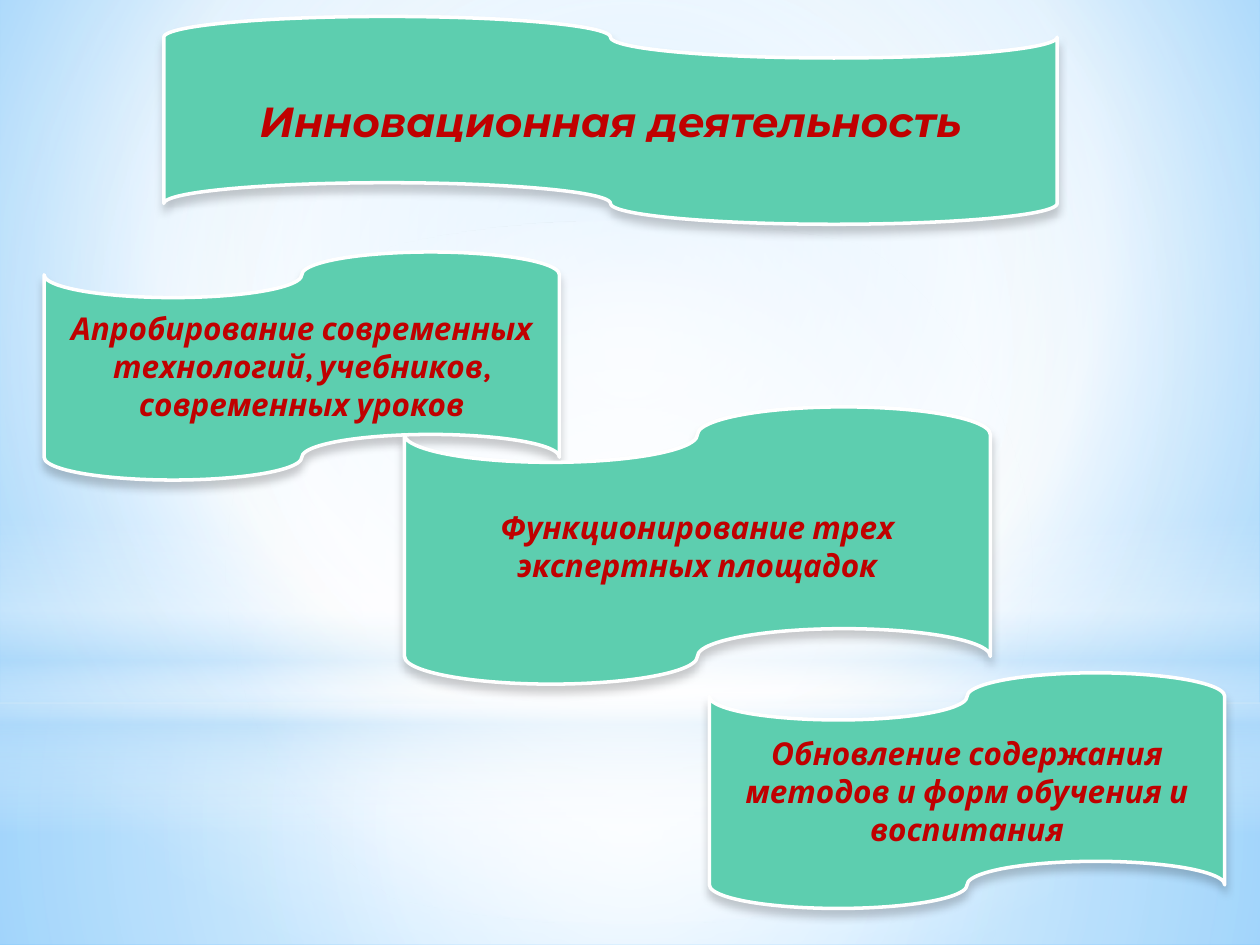
from lxml import etree
from pptx import Presentation
from pptx.dml.color import RGBColor
from pptx.enum.shapes import MSO_SHAPE as SHAPE
from pptx.enum.text import MSO_ANCHOR as ANCHOR, PP_ALIGN as ALIGN
from pptx.oxml import parse_xml
from pptx.oxml.ns import nsdecls, qn
from pptx.util import Inches, Pt

GREEN, RED, WHITE, SKY = "5DCEAF", "C00000", "FFFFFF", "B4DCFA"
CENTRE = (50, 50, 50, 50)


def rgb(value):
    return RGBColor.from_string(value)


def set_gradient(parent, stops, focus=None):
    """Swap the empty fill for a gradient: circular with a focus, else vertical."""
    grad = parse_xml(f'<a:gradFill {nsdecls("a")} rotWithShape="1"><a:gsLst/></a:gradFill>')
    for pos, color, opacity in stops:
        gs = etree.SubElement(grad[0], qn("a:gs"), pos=str(pos * 1000))
        clr = etree.SubElement(gs, qn("a:srgbClr"), val=color)
        if opacity < 100:
            etree.SubElement(clr, qn("a:alpha"), val=str(opacity * 1000))
    if focus:
        circle = etree.SubElement(grad, qn("a:path"), path="circle")
        etree.SubElement(circle, qn("a:fillToRect"),
                         {side: str(v * 1000) for side, v in zip("ltrb", focus)})
    else:
        etree.SubElement(grad, qn("a:lin"), ang="5400000", scaled="0")
    parent.replace(parent.find(qn("a:noFill")), grad)


def add_shape(s, kind, box):
    sp = s.shapes.add_shape(kind, *map(Inches, box))
    sp.shadow.inherit = False
    return sp


def add_glow(s, kind, top, height, stops, focus=None):
    """Full-width translucent layer of the backdrop."""
    sp = add_shape(s, kind, (0, top, 10, height))
    sp.line.fill.background()
    sp.fill.background()
    set_gradient(sp._element.spPr, stops, focus)


def add_shadow(sp):
    effects = sp._element.spPr.find(qn("a:effectLst"))
    effects.append(parse_xml(
        f'<a:outerShdw {nsdecls("a")} blurRad="{Pt(5)}" dist="{Pt(4)}" dir="5400000" '
        'rotWithShape="0"><a:srgbClr val="000000"><a:alpha val="20000"/></a:srgbClr>'
        '</a:outerShdw>'))


def add_tape(s, box, text, font="Karla", size=18, mirrored=False):
    sp = add_shape(s, SHAPE.FLOWCHART_PUNCHED_TAPE, box)
    sp.fill.solid()
    sp.fill.fore_color.rgb = rgb(GREEN)
    sp.line.color.rgb = rgb(WHITE)
    sp.line.width = Pt(2)
    add_shadow(sp)
    if mirrored:
        sp.rotation = 180
        sp._element.spPr.xfrm.set("flipV", "1")
    tf = sp.text_frame
    tf.word_wrap = True
    tf.vertical_anchor = ANCHOR.MIDDLE
    p = tf.paragraphs[0]
    p.alignment = ALIGN.CENTER
    r = p.add_run()
    r.text = text
    for name, value in dict(name=font, size=Pt(size), bold=True, italic=True).items():
        setattr(r.font, name, value)
    r.font.color.rgb = rgb(RED)


def add_backdrop(s):
    s.background.fill.background()
    set_gradient(s._element.cSld.bg.bgPr,
                 [(0, "9ED5FF", 100), (60, WHITE, 100), (100, "5BB9FF", 100)],
                 (20, 10, 20, 60))
    # Floor, wall, horizon and central light
    add_glow(s, SHAPE.RECTANGLE, 5.58, 1.92,
             [(0, WHITE, 91), (37, WHITE, 76), (100, SKY, 79)], CENTRE)
    add_glow(s, SHAPE.RECTANGLE, 0, 5.58,
             [(0, WHITE, 89), (48, WHITE, 62), (100, SKY, 79)], CENTRE)
    add_glow(s, SHAPE.RECTANGLE, 4.12, 2.5,
             [(0, WHITE, 0), (29, WHITE, 30), (45, SKY, 40),
              (55, WHITE, 26), (65, SKY, 60), (100, WHITE, 0)])
    add_glow(s, SHAPE.OVAL, 1.75, 5.58, [(0, WHITE, 100), (56, WHITE, 0)], CENTRE)


def main():
    prs = Presentation()
    prs.slide_width, prs.slide_height = Inches(10), Inches(7.5)
    s = prs.slides.add_slide(prs.slide_layouts[6])
    add_backdrop(s)

    # Heading
    add_tape(s, (1.3, 0.13, 7.09, 1.65), "Инновационная деятельность",
             "Montserrat", 24, mirrored=True)
    # Areas of work
    for box, text in [
        ((0.35, 2, 4.09, 1.81),
         "Апробирование современных технологий, учебников, современных уроков"),
        ((5.63, 5.34, 4.09, 1.87),
         "Обновление содержания методов и форм обучения и воспитания"),
        ((3.21, 3.23, 4.65, 2.2), "Функционирование трех экспертных площадок"),
    ]:
        add_tape(s, box, text)
    prs.save("out.pptx")


if __name__ == "__main__":
    main()
